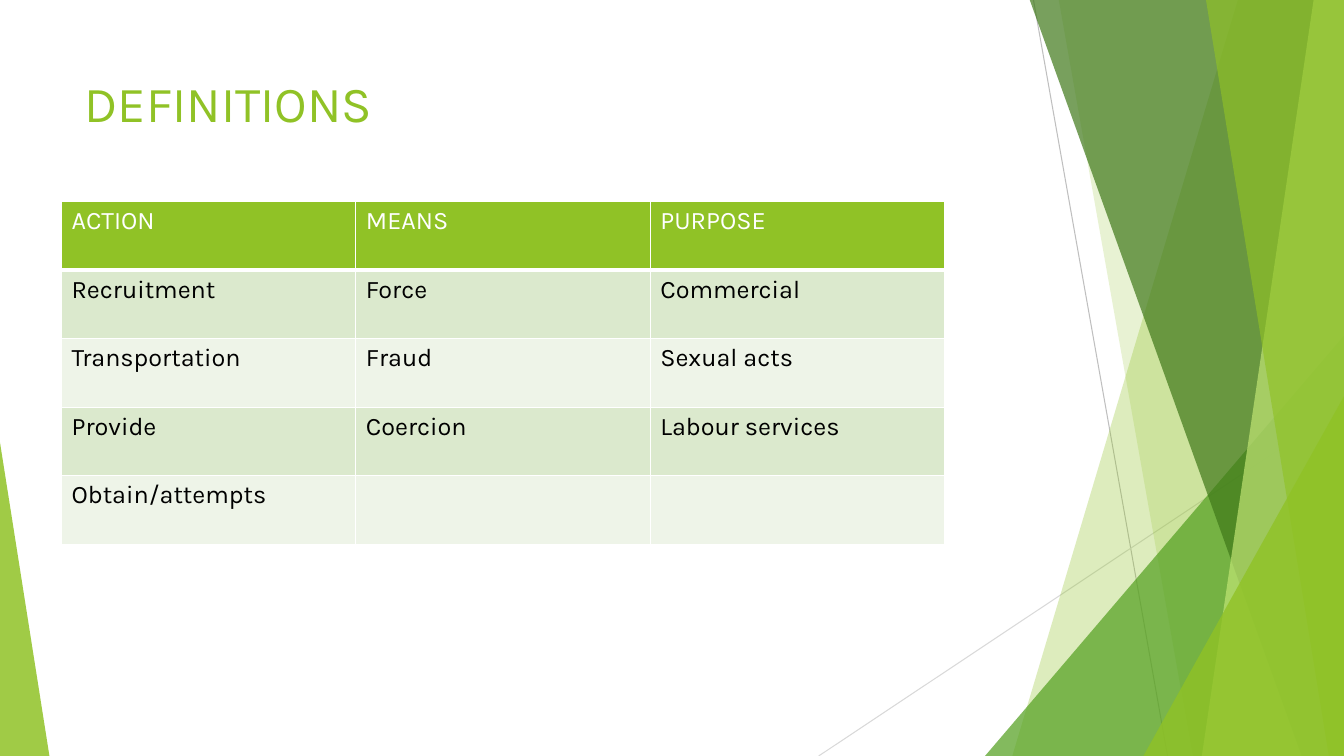
from lxml import etree
from pptx import Presentation
from pptx.dml.color import RGBColor
from pptx.enum.shapes import MSO_CONNECTOR, MSO_SHAPE
from pptx.enum.text import MSO_ANCHOR, PP_ALIGN
from pptx.oxml.ns import qn
from pptx.util import Pt

PX = 9144  # EMU in one px, 100 px to the inch
WIDTH, HEIGHT = 1333, 750
TOP = -1  # the facets start just above the slide
STRAIGHT = MSO_CONNECTOR.STRAIGHT
TRIANGLE = MSO_SHAPE.ISOSCELES_TRIANGLE
LEFT = PP_ALIGN.LEFT
ANCHOR_TOP = MSO_ANCHOR.TOP

COLORS = {
    "lime": "90C226", "green": "54A021", "forest": "3F7819", "pale": "C0E474",
    "line_dark": "BFBFBF", "line_light": "D9D9D9",
    "band_dark": "DBE9CD", "band_light": "EEF4E8",
    "white": "FFFFFF", "black": "000000",
}


class SlideBuilder:
    def __init__(self, presentation, font_name):
        self.slide = presentation.slides.add_slide(presentation.slide_layouts[5])
        self.font_name = font_name

    def color(self, name):
        return RGBColor.from_string(COLORS[name])

    def style_text(self, paragraph, size, color):
        paragraph.alignment = LEFT
        font = paragraph.font
        font.name = self.font_name
        font.size = Pt(size)
        font.bold = False
        font.color.rgb = self.color(color)

    def style_facet(self, shape, color, opacity):
        shape.shadow.inherit = False
        shape.line.fill.background()
        shape.fill.solid()
        shape.fill.fore_color.rgb = self.color(color)
        rgb = shape.fill._xPr.find(".//" + qn("a:srgbClr"))
        etree.SubElement(rgb, qn("a:alpha"), val=str(opacity * 1000))

    def line(self, start, end, color):
        connector = self.slide.shapes.add_connector(
            STRAIGHT, *(value * PX for value in start + end))
        connector.line.color.rgb = self.color(color)
        connector.line.width = Pt(0.75)
        etree.SubElement(connector._element.spPr, qn("a:effectLst"))

    def facet(self, top_left, top_right, bottom_left, color, opacity):
        builder = self.slide.shapes.build_freeform(top_left, TOP, scale=PX)
        builder.add_line_segments(
            [(top_right, TOP), (WIDTH, HEIGHT), (bottom_left, HEIGHT)])
        self.style_facet(builder.convert_to_shape(), color, opacity)

    def triangle(self, left, top, right, apex, color, opacity):
        shape = self.slide.shapes.add_shape(
            TRIANGLE, left * PX, top * PX, (right - left) * PX, (HEIGHT - top) * PX)
        shape.adjustments[0] = apex
        self.style_facet(shape, color, opacity)

    def title(self, text, left, top, width, height):
        title = self.slide.shapes.title
        title.left, title.top = left * PX, top * PX
        title.width, title.height = width * PX, height * PX
        frame = title.text_frame
        frame.text = text
        frame.word_wrap = True
        frame.vertical_anchor = ANCHOR_TOP
        self.style_text(frame.paragraphs[0], 36, "lime")

    def cell_border(self, cell, side, width):
        border = etree.SubElement(
            cell._tc.get_or_add_tcPr(), qn("a:ln" + side), w=str(Pt(width)))
        fill = etree.SubElement(border, qn("a:solidFill"))
        etree.SubElement(fill, qn("a:srgbClr"), val=COLORS["white"])

    def table(self, rows, left, top, column_width, row_height):
        columns = len(rows[0])
        table = self.slide.shapes.add_table(
            len(rows), columns, left * PX, top * PX,
            columns * column_width * PX, len(rows) * row_height * PX).table
        for column in table.columns:
            column.width = column_width * PX
        for row_index, texts in enumerate(rows):
            header = row_index == 0
            band = "band_dark" if row_index % 2 else "band_light"
            for column_index, text in enumerate(texts):
                cell = table.cell(row_index, column_index)
                cell.text = text
                self.style_text(cell.text_frame.paragraphs[0], 18,
                                "white" if header else "black")
                for side in "LRTB":
                    self.cell_border(cell, side, 3 if header and side == "B" else 1)
                cell.fill.solid()
                cell.fill.fore_color.rgb = self.color("lime" if header else band)


def main():
    presentation = Presentation()
    presentation.slide_width = WIDTH * PX
    presentation.slide_height = HEIGHT * PX
    builder = SlideBuilder(presentation, "Karla")

    # Thin lines behind the facets
    builder.line((1025, 0), (1158, HEIGHT), "line_dark")
    builder.line((WIDTH, 403), (812, HEIGHT), "line_light")

    # Green facets, from back to front
    builder.facet(1228, WIDTH, 1004, "lime", 30)
    builder.facet(1050, WIDTH, 1183, "lime", 20)
    builder.triangle(977, 333, WIDTH, 1, "green", 72)
    builder.facet(1021, WIDTH, 1291, "forest", 70)
    builder.facet(1303, WIDTH, 1192, "pale", 70)
    builder.facet(1196, WIDTH, 1318, "lime", 65)
    builder.triangle(1134, 393, WIDTH, 1, "lime", 80)
    builder.triangle(0, 439, 49, 0, "lime", 85)

    # Title and definitions table
    builder.title("DEFINITIONS", 74, 67, 940, 144)
    builder.table([
        ("ACTION", "MEANS", "PURPOSE"),
        ("Recruitment", "Force", "Commercial"),
        ("Transportation", "Fraud", "Sexual acts"),
        ("Provide", "Coercion", "Labour services"),
        ("Obtain/attempts", "", ""),
    ], 61, 200, 292, 68)

    presentation.save("out.pptx")


if __name__ == "__main__":
    main()
